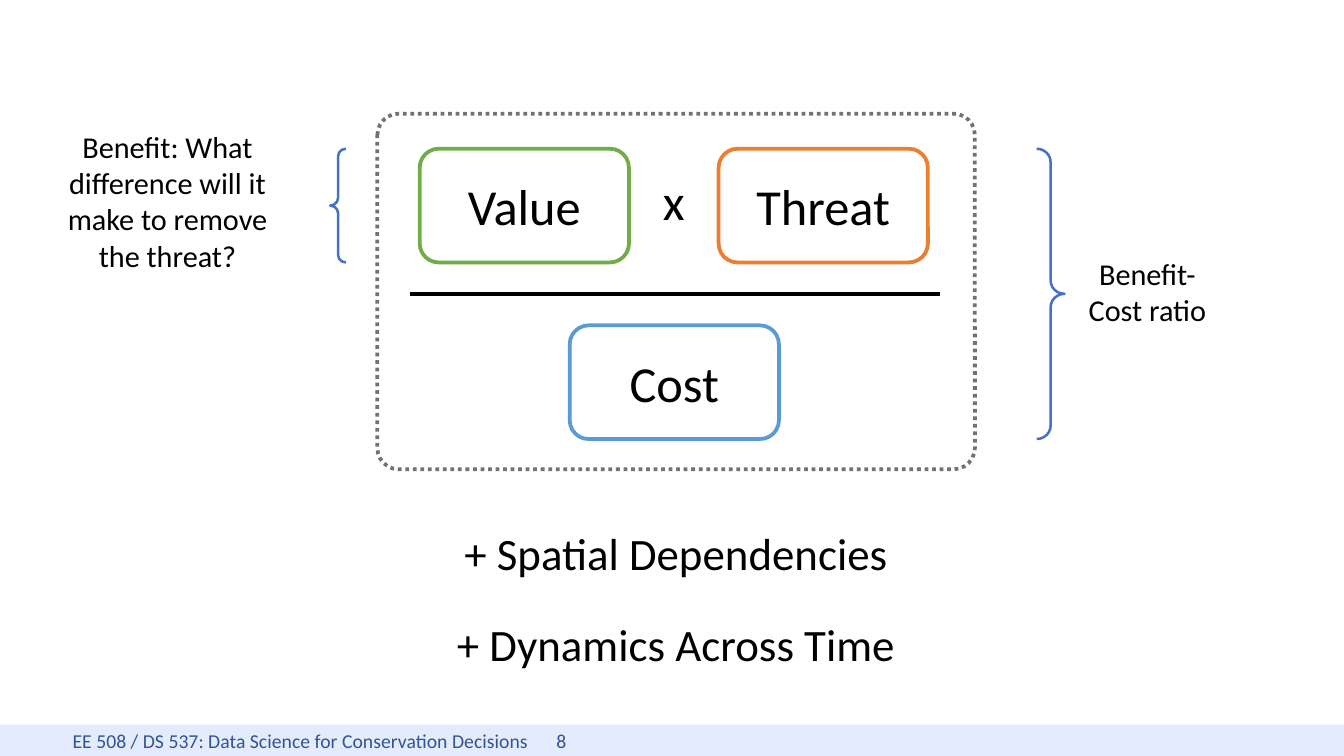
from dataclasses import dataclass
from typing import NamedTuple, Optional

from lxml.etree import SubElement
from pptx import Presentation
from pptx.dml.color import RGBColor
from pptx.enum.dml import MSO_LINE
from pptx.enum.shapes import MSO_CONNECTOR, MSO_SHAPE
from pptx.enum.text import MSO_ANCHOR, PP_ALIGN
from pptx.oxml.ns import qn
from pptx.util import Emu, Inches, Pt

WIDE, HIGH = Inches(11.11), Inches(6.25)


@dataclass(frozen=True)
class Theme:
    font: str = "Calibri"
    ink: str = "000000"
    paper: str = "FFFFFF"
    green: str = "70AD47"
    orange: str = "ED7D31"
    sky: str = "5B9BD5"
    blue: str = "4472C4"
    grey: str = "767171"
    band: str = "E3EBFC"
    navy: str = "2F5597"
    term: float = 30
    extra: float = 26.7
    note: float = 18
    foot: float = 11.7
    thick: float = 2.25
    thin: float = 1.5


THEME = Theme()


class Box(NamedTuple):
    """Left, top, width and height in percent of the slide."""
    x: float
    y: float
    w: float
    h: float

    def place(self) -> tuple[Emu, Emu, Emu, Emu]:
        return across(self.x), down(self.y), across(self.w), down(self.h)


class Card(NamedTuple):
    text: str
    x: float
    y: float
    tint: str


class Label(NamedTuple):
    text: str
    box: Box
    size: float


class Brace(NamedTuple):
    kind: MSO_SHAPE
    box: Box


CARD_W, CARD_H = 15.57, 15.04
TOP, BASE = 19.68, 43.04
FRAME = Box(28.08, 15.04, 44.46, 47.04)
EXTRA_TOP, EXTRA_STEP = 68.8, 12
FOOT = Box(0, 95.84, 100, 4.16)
RULE_X, RULE_END, RULE_Y = 30.51, 69.94, 38.88

CARDS = [
    Card("Value", 31.23, TOP, THEME.green),
    Card("Threat", 53.47, TOP, THEME.orange),
    Card("Cost", 42.39, BASE, THEME.sky),
]
EXTRAS = ["+ Spatial Dependencies", "+ Dynamics Across Time"]
LABELS = [
    Label("x", Box(48.42, 21.76, 3.42, 9.76), THEME.term),
    *(Label(text, Box(FRAME.x, EXTRA_TOP + i * EXTRA_STEP, FRAME.w, 8.8), THEME.extra)
      for i, text in enumerate(EXTRAS)),
    Label("Benefit: What difference will it make to remove the threat?",
          Box(2.7, 16.16, 19.53, 20.96), THEME.note),
    Label("Benefit-Cost ratio", Box(79.12, 32.96, 12.51, 11.36), THEME.note),
]
BRACES = [
    Brace(MSO_SHAPE.LEFT_BRACE, Box(24.57, TOP, 1.17, CARD_H)),
    Brace(MSO_SHAPE.RIGHT_BRACE, Box(77.14, TOP, 2.07, BASE + CARD_H - TOP)),
]


def across(share: float) -> Emu:
    return Emu(round(WIDE * share / 100))


def down(share: float) -> Emu:
    return Emu(round(HIGH * share / 100))


def add_shape(slide, kind: MSO_SHAPE, box: Box, fill: Optional[str] = None,
              line: Optional[str] = None, width: float = THEME.thick):
    shape = slide.shapes.add_shape(kind, *box.place())
    shape.shadow.inherit = False
    if fill:
        shape.fill.solid()
        shape.fill.fore_color.rgb = RGBColor.from_string(fill)
    else:
        shape.fill.background()
    if line:
        shape.line.color.rgb = RGBColor.from_string(line)
        shape.line.width = Pt(width)
    else:
        shape.line.fill.background()
    return shape


def write(shape, text: str, size: float, tint: str = THEME.ink,
          align: PP_ALIGN = PP_ALIGN.CENTER,
          anchor: MSO_ANCHOR = MSO_ANCHOR.MIDDLE) -> None:
    frame = shape.text_frame
    frame.word_wrap = True
    frame.vertical_anchor = anchor
    para = frame.paragraphs[0]
    para.alignment = align
    run = para.add_run()
    run.text = text
    run.font.name = THEME.font
    run.font.size = Pt(size)
    run.font.color.rgb = RGBColor.from_string(tint)


def add_foot(slide) -> None:
    """Draw the footer band, with the page number at a tab stop."""
    band = add_shape(slide, MSO_SHAPE.RECTANGLE, FOOT, THEME.band)
    write(band, "EE 508 / DS 537: Data Science for Conservation Decisions\t8",
          THEME.foot, THEME.navy, PP_ALIGN.LEFT)
    frame = band.text_frame
    frame.margin_left = across(5.4)
    frame.margin_top = frame.margin_bottom = 0
    props = frame.paragraphs[0]._p.get_or_add_pPr()
    stops = SubElement(props, qn("a:tabLst"))
    SubElement(stops, qn("a:tab"), pos=str(across(36)), algn="l")


def add_card(slide, card: Card) -> None:
    box = Box(card.x, card.y, CARD_W, CARD_H)
    shape = add_shape(slide, MSO_SHAPE.ROUNDED_RECTANGLE, box, THEME.paper, card.tint)
    write(shape, card.text, THEME.term)


def add_frame(slide) -> None:
    frame = add_shape(slide, MSO_SHAPE.ROUNDED_RECTANGLE, FRAME, line=THEME.grey)
    frame.adjustments[0] = 0.06
    frame.line.dash_style = MSO_LINE.ROUND_DOT


def add_rule(slide) -> None:
    """Draw the fraction bar."""
    rule = slide.shapes.add_connector(
        MSO_CONNECTOR.STRAIGHT, across(RULE_X), down(RULE_Y), across(RULE_END), down(RULE_Y))
    rule.line.color.rgb = RGBColor.from_string(THEME.ink)
    rule.line.width = Pt(THEME.thick)
    SubElement(rule._element.spPr, qn("a:effectLst"))


def add_label(slide, label: Label) -> None:
    shape = slide.shapes.add_textbox(*label.box.place())
    write(shape, label.text, label.size, anchor=MSO_ANCHOR.TOP)


def add_brace(slide, brace: Brace) -> None:
    shape = add_shape(slide, brace.kind, brace.box, line=THEME.blue, width=THEME.thin)
    shape.adjustments[0] = 0.48
    shape.adjustments[1] = 0.5


def main() -> None:
    deck = Presentation()
    deck.slide_width, deck.slide_height = WIDE, HIGH
    slide = deck.slides.add_slide(deck.slide_layouts[6])
    add_foot(slide)
    for card in CARDS:
        add_card(slide, card)
    add_frame(slide)
    add_rule(slide)
    for label in LABELS:
        add_label(slide, label)
    for brace in BRACES:
        add_brace(slide, brace)
    deck.save("out.pptx")


if __name__ == "__main__":
    main()
